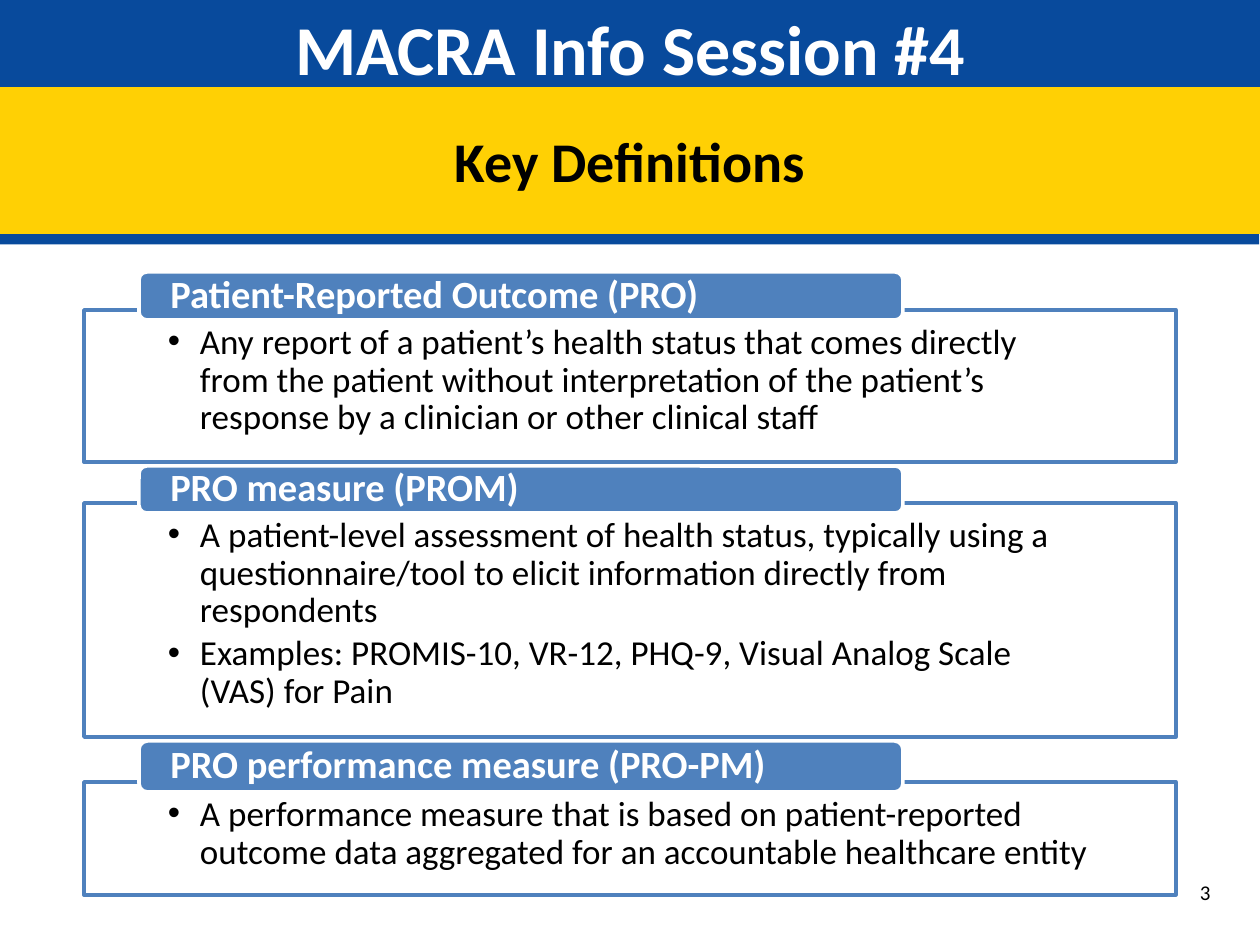
from lxml.etree import SubElement
from pptx import Presentation
from pptx.dml.color import RGBColor
from pptx.enum.shapes import MSO_SHAPE as SHAPE
from pptx.enum.text import MSO_ANCHOR as ANCHOR, MSO_AUTO_SIZE as AUTO, PP_ALIGN as ALIGN
from pptx.oxml.ns import qn
from pptx.util import Pt

PX = 914400 / 126  # EMU in one px
COLORS = {
    "navy": "084A9C", "gold": "FFD004", "blue": "4F81BD",
    "white": "FFFFFF", "black": "000000",
}


def px(n):
    return round(n * PX)


def rgb(name):
    return RGBColor.from_string(COLORS[name])


def write(tf, *texts, size, color="black", bold=False, align=ALIGN.LEFT,
          anchor=ANCHOR.TOP, margins=(13, 6, 13, 6), spacing=1.0, after=0, bullet=False):
    """Fill a text frame with one paragraph per text."""
    tf.word_wrap = True
    tf.auto_size = AUTO.NONE
    tf.vertical_anchor = anchor
    tf.margin_left, tf.margin_top, tf.margin_right, tf.margin_bottom = map(px, margins)
    for i, text in enumerate(texts):
        p = tf.add_paragraph() if i else tf.paragraphs[0]
        p.alignment, p.line_spacing = align, spacing
        p.space_before, p.space_after = Pt(0), Pt(after)
        r = p.add_run()
        r.text = text
        r.font.name, r.font.size, r.font.bold = "Calibri", Pt(size), bold
        r.font.color.rgb = rgb(color)
        if bullet:
            pPr = p._p.get_or_add_pPr()
            pPr.set("marL", str(px(32)))
            pPr.set("indent", str(px(-32)))
            SubElement(pPr, qn("a:buFont"), typeface="Arial")
            SubElement(pPr, qn("a:buChar"), char="•")


class Deck:
    def __init__(self, prs, layout):
        self.s = prs.slides.add_slide(prs.slide_layouts[layout])
        self.holders = {ph.placeholder_format.idx: ph for ph in self.s.placeholders}

    def place(self, sp, box, fill, line=None):
        sp.left, sp.top, sp.width, sp.height = map(px, box)
        sp.fill.solid()
        sp.fill.fore_color.rgb = rgb(fill)
        if line:
            sp.line.color.rgb, sp.line.width = rgb(line), Pt(2)
        else:
            sp.line.fill.background()
        sp.shadow.inherit = False
        return sp

    def shape(self, kind, box, fill, line=None):
        return self.place(self.s.shapes.add_shape(kind, *map(px, box)), box, fill, line)

    def band(self, sp, text, shadow, **fmt):
        """Full-width heading with a hard shadow just below it."""
        effects = sp._element.spPr.find(qn("a:effectLst"))
        drop = SubElement(effects, qn("a:outerShdw"), blurRad="0", dist=str(Pt(6)),
                          dir="5640000", algn="ctr", rotWithShape="0")
        SubElement(drop, qn("a:srgbClr"), val=COLORS[shadow])
        write(sp.text_frame, text, bold=True, align=ALIGN.CENTER, **fmt)

    def title(self, text):
        sp = self.place(self.holders.pop(0), (0, 0, 1260, 185), "navy")
        self.band(sp, text, "gold", size=40, color="white")

    def subtitle(self, text):
        sp = self.shape(SHAPE.RECTANGLE, (0, 87, 1260, 147), "gold")
        self.band(sp, text, "navy", size=32, anchor=ANCHOR.MIDDLE)

    def points(self, idx, top, height, texts):
        sp = self.place(self.holders.pop(idx), (84, top, 1092, height), "white", "blue")
        write(sp.text_frame, *texts, size=20, margins=(84, 14, 84, 20),
              spacing=0.9, after=3, bullet=True)

    def tab(self, top, height, text):
        sp = self.shape(SHAPE.ROUNDED_RECTANGLE, (139, top, 764, height), "blue", "white")
        write(sp.text_frame, text, size=22, color="white", bold=True,
              anchor=ANCHOR.MIDDLE, margins=(29, 0, 29, 0), spacing=0.9)

    def number(self, text):
        sp = self.s.shapes.add_textbox(*map(px, (1187, 874, 63, 38)))
        write(sp.text_frame, text, size=12)

    def drop_unused(self):
        for ph in self.holders.values():
            ph._element.getparent().remove(ph._element)
        self.holders.clear()


# Placeholder, tab top and height, box top and height, term, points
DEFINITIONS = [
    (1, 272, 48, 310, 152, "Patient-Reported Outcome (PRO)", [
        "Any report of a patient’s health status that comes directly from the patient "
        "without interpretation of the patient’s response by a clinician or other clinical staff"]),
    (2, 466, 47, 503, 234, "PRO measure (PROM)", [
        "A patient-level assessment of health status, typically using a questionnaire/tool "
        "to elicit information directly from respondents",
        "Examples: PROMIS-10, VR-12, PHQ-9, Visual Analog Scale (VAS) for Pain"]),
    (4, 741, 51, 782, 113, "PRO performance measure (PRO-PM)", [
        "A performance measure that is based on patient-reported outcome data "
        "aggregated for an accountable healthcare entity"]),
]


def main():
    prs = Presentation()
    prs.slide_width, prs.slide_height = px(1260), px(945)
    deck = Deck(prs, layout=4)

    # Headings
    deck.title("MACRA Info Session #4")
    deck.subtitle("Key Definitions")

    # Definitions, each a bulleted box under its tab
    for idx, tab_top, tab_height, top, height, term, texts in DEFINITIONS:
        deck.points(idx, top, height, texts)
        deck.tab(tab_top, tab_height, term)

    # Slide number
    deck.number("3")
    deck.drop_unused()
    prs.save("out.pptx")


if __name__ == "__main__":
    main()
